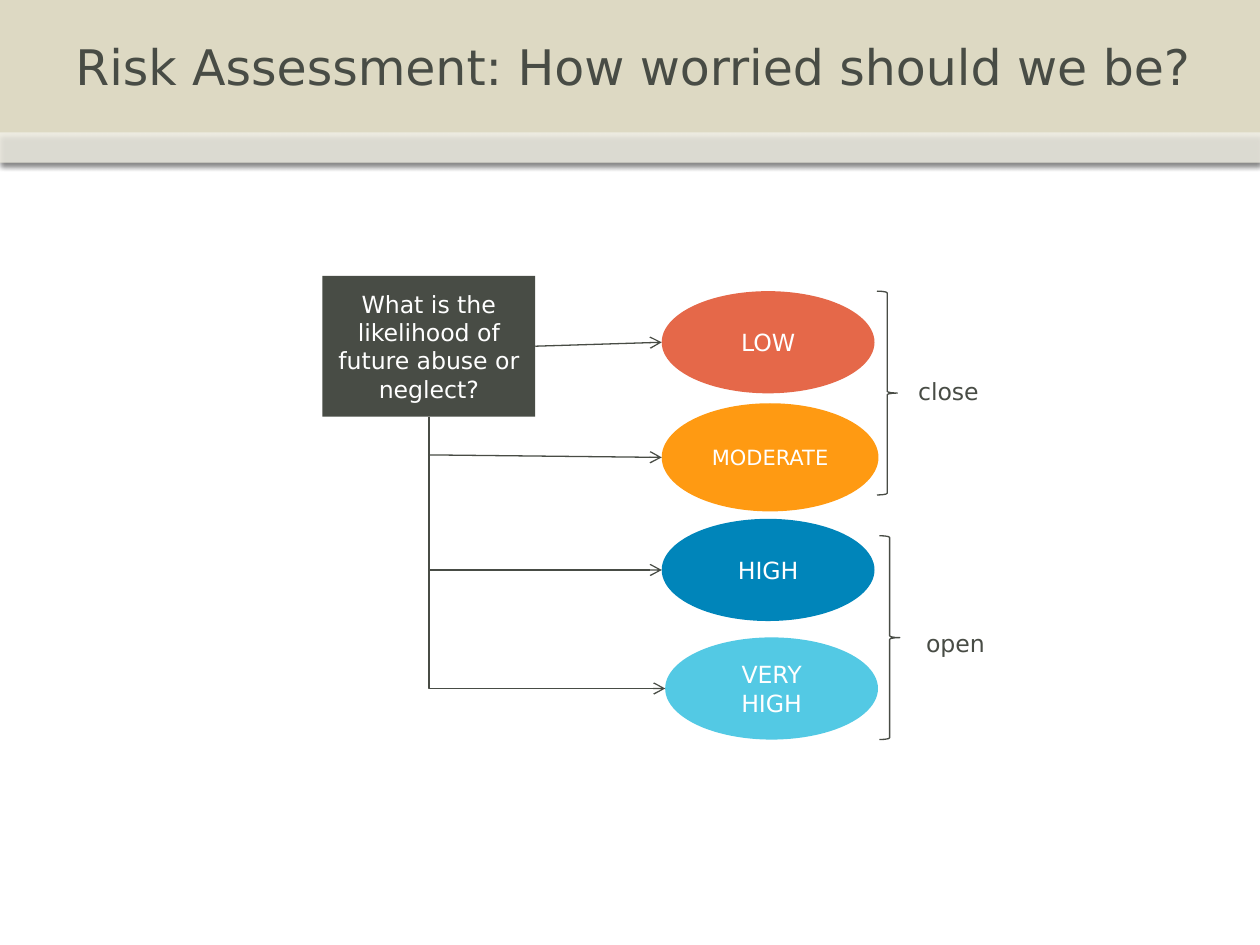
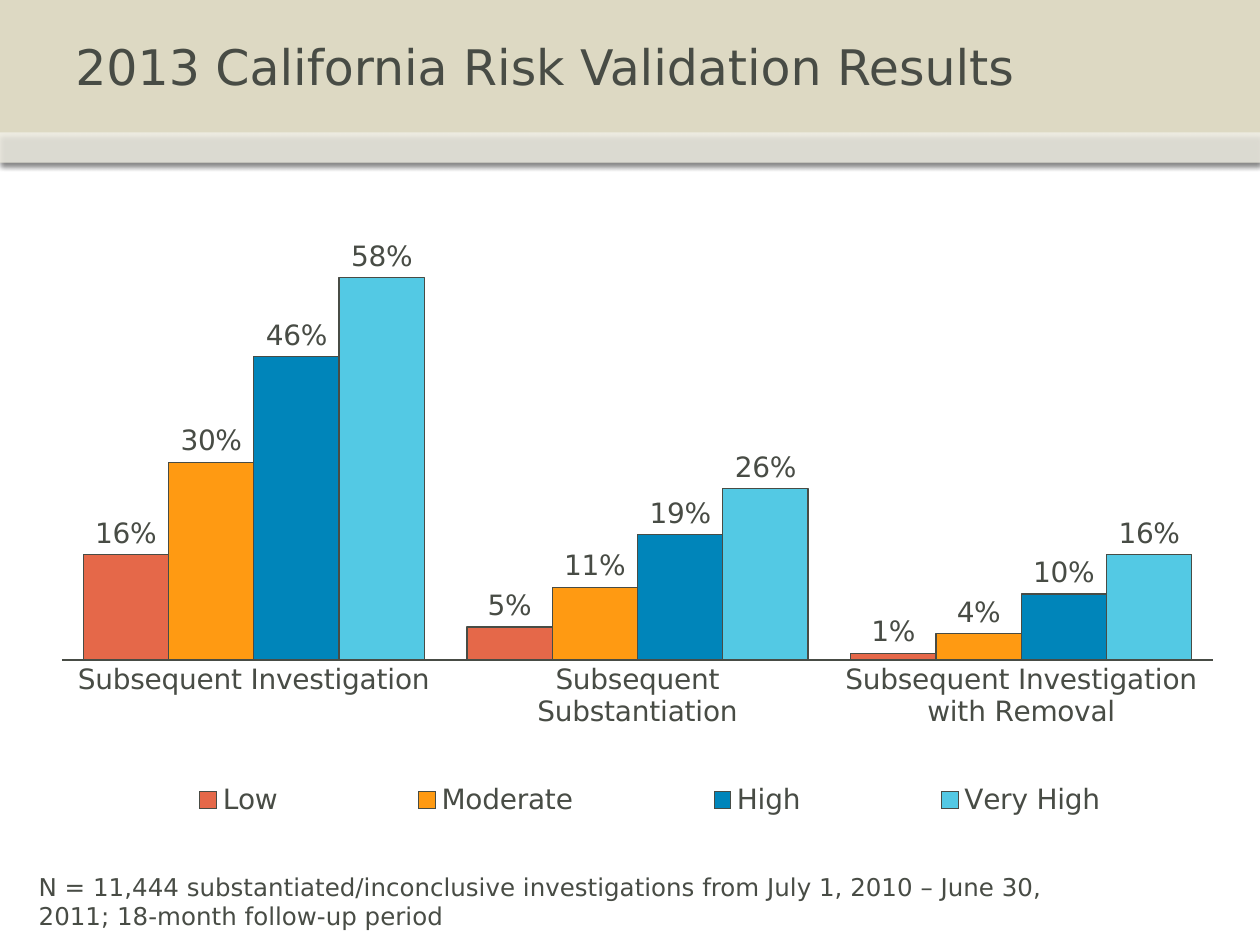
from dataclasses import dataclass

from lxml.etree import SubElement
from pptx import Presentation
from pptx.chart.data import CategoryChartData
from pptx.dml.color import RGBColor
from pptx.enum.chart import XL_CHART_TYPE, XL_LABEL_POSITION, XL_LEGEND_POSITION, XL_TICK_LABEL_POSITION, XL_TICK_MARK
from pptx.enum.shapes import MSO_CONNECTOR, MSO_SHAPE
from pptx.enum.text import MSO_ANCHOR, PP_ALIGN
from pptx.oxml import parse_xml
from pptx.oxml.ns import nsdecls, qn
from pptx.util import Cm, Pt


@dataclass(frozen=True)
class Theme:
    font: str = "DejaVu Sans"
    ink: str = "484C45"
    white: str = "FFFFFF"
    sand: str = "DDD9C3"
    low: str = "E56849"
    moderate: str = "FF9A12"
    high: str = "0085BA"
    very_high: str = "53C9E4"
    title_size: float = 28
    chart_size: float = 16
    note_size: float = 14
    body_size: float = 13.5
    small_size: float = 12
    line_width: float = 0.75


THEME = Theme()


@dataclass(frozen=True)
class Box:
    """A rectangle in centimetres."""
    left: float
    top: float
    width: float
    height: float

    @property
    def middle(self) -> float:
        return self.top + self.height / 2

    @property
    def center(self) -> float:
        return self.left + self.width / 2

    @property
    def bottom(self) -> float:
        return self.top + self.height

    def lengths(self) -> tuple:
        return Cm(self.left), Cm(self.top), Cm(self.width), Cm(self.height)


@dataclass(frozen=True)
class RiskLevel:
    name: str
    color: str
    box: Box
    rates: tuple
    label_size: float = THEME.body_size


@dataclass(frozen=True)
class Decision:
    name: str
    brace: Box
    label: Box


QUESTION_BOX = Box(6.5, 5.56, 4.29, 2.84)
RISK_LEVELS = (
    RiskLevel("Low", THEME.low, Box(13.34, 5.87, 4.29, 2.06), (0.16, 0.05, 0.01)),
    RiskLevel("Moderate", THEME.moderate, Box(13.34, 8.13, 4.37, 2.18), (0.3, 0.11, 0.04), THEME.small_size),
    RiskLevel("High", THEME.high, Box(13.34, 10.46, 4.29, 2.06), (0.46, 0.19, 0.1)),
    RiskLevel("Very High", THEME.very_high, Box(13.41, 12.85, 4.29, 2.06), (0.58, 0.26, 0.16)),
)
DECISIONS = (
    Decision("close", Box(17.68, 5.87, 0.41, 4.11), Box(18.26, 7.47, 1.9, 0.84)),
    Decision("open", Box(17.73, 10.8, 0.41, 4.11), Box(18.42, 12.55, 1.75, 0.84)),
)
OUTCOMES = (
    "Subsequent Investigation",
    "Subsequent Substantiation",
    "Subsequent Investigation with Removal",
)


def rgb(color: str) -> RGBColor:
    return RGBColor.from_string(color)


def style_font(font, size: float, color: str = THEME.ink) -> None:
    font.name = THEME.font
    font.size = Pt(size)
    font.color.rgb = rgb(color)


def style_line(line) -> None:
    line.color.rgb = rgb(THEME.ink)
    line.width = Pt(THEME.line_width)


def write(shape, text: str, size: float, color: str = THEME.ink,
          align=PP_ALIGN.LEFT, anchor=MSO_ANCHOR.TOP) -> None:
    frame = shape.text_frame
    frame.word_wrap = True
    frame.vertical_anchor = anchor
    paragraph = frame.paragraphs[0]
    paragraph.alignment = align
    run = paragraph.add_run()
    run.text = text
    style_font(run.font, size, color)


def add_text(slide, box: Box, text: str, size: float, anchor=MSO_ANCHOR.TOP) -> None:
    write(slide.shapes.add_textbox(*box.lengths()), text, size, anchor=anchor)


def add_filled(slide, kind, box: Box, color: str):
    shape = slide.shapes.add_shape(kind, *box.lengths())
    shape.shadow.inherit = False
    shape.fill.solid()
    shape.fill.fore_color.rgb = rgb(color)
    shape.line.fill.background()
    return shape


def add_node(slide, kind, box: Box, color: str, text: str, size: float):
    shape = add_filled(slide, kind, box, color)
    write(shape, text, size, THEME.white, PP_ALIGN.CENTER, MSO_ANCHOR.MIDDLE)
    return shape


def add_band(slide, box: Box, color: str, opacity: int = 100) -> None:
    """Draw a full-width header band with a soft shadow below it."""
    properties = add_filled(slide, MSO_SHAPE.RECTANGLE, box, color)._element.spPr
    fill_color = properties.find(qn("a:solidFill")).find(qn("a:srgbClr"))
    SubElement(fill_color, qn("a:alpha"), val=str(opacity * 1000))
    shadow = SubElement(properties.find(qn("a:effectLst")), qn("a:outerShdw"),
                        blurRad=str(Pt(3.1)), dist=str(Pt(1.8)), dir="5400000",
                        algn="t", rotWithShape="0")
    shadow_color = SubElement(shadow, qn("a:srgbClr"), val="000000")
    SubElement(shadow_color, qn("a:alpha"), val="35000")


def add_titled_slide(presentation, title: str):
    slide = presentation.slides.add_slide(presentation.slide_layouts[6])
    add_band(slide, Box(0, 0, 25.4, 3.28), THEME.sand)
    add_band(slide, Box(0, 2.67, 25.4, 0.61), THEME.white, opacity=53)
    add_text(slide, Box(1.27, 0, 23.19, 2.67), title, THEME.title_size, MSO_ANCHOR.MIDDLE)
    return slide


def add_arrow(slide, start: tuple, end: tuple, kind=MSO_CONNECTOR.STRAIGHT):
    connector = slide.shapes.add_connector(kind, *(Cm(value) for value in start + end))
    style_line(connector.line)
    SubElement(connector.line._get_or_add_ln(), qn("a:tailEnd"), type="arrow")
    SubElement(connector._element.spPr, qn("a:effectLst"))
    return connector


def add_down_right_arrow(slide, start: tuple, end: tuple) -> None:
    """Draw one elbow that runs down first and then right."""
    connector = add_arrow(slide, start, end, MSO_CONNECTOR.ELBOW)
    across, down = end[0] - start[0], end[1] - start[1]
    turned = Box((start[0] + end[0] - down) / 2, (start[1] + end[1] - across) / 2, down, across)
    connector.left, connector.top, connector.width, connector.height = turned.lengths()
    properties = connector._element.spPr
    properties.find(qn("a:prstGeom")).set("prst", "bentConnector2")
    transform = properties.find(qn("a:xfrm"))
    transform.set("rot", "16200000")
    transform.set("flipH", "1")


def build_risk_slide(presentation) -> None:
    slide = add_titled_slide(presentation, "Risk Assessment: How worried should we be?")
    question = add_node(slide, MSO_SHAPE.RECTANGLE, QUESTION_BOX, THEME.ink,
                        "What is the likelihood of future abuse or neglect?", THEME.body_size)
    for level in RISK_LEVELS:
        add_node(slide, MSO_SHAPE.OVAL, level.box, level.color, level.name.upper(), level.label_size)

    low, moderate, high, very_high = ((level.box.left, level.box.middle) for level in RISK_LEVELS)
    trunk = QUESTION_BOX.center
    add_down_right_arrow(slide, (trunk, QUESTION_BOX.bottom), very_high)
    add_arrow(slide, (trunk, high[1]), high)
    add_arrow(slide, (trunk, 9.17), moderate)
    low_arrow = add_arrow(slide, (QUESTION_BOX.left + QUESTION_BOX.width, QUESTION_BOX.middle), low)
    low_arrow.begin_connect(question, 3)

    for decision in DECISIONS:
        brace = slide.shapes.add_shape(MSO_SHAPE.RIGHT_BRACE, *decision.brace.lengths())
        brace.shadow.inherit = False
        brace.fill.background()
        style_line(brace.line)
        add_text(slide, decision.label, decision.name, THEME.body_size)


def manual_layout(left: float, top: float, width: float, height: float, inner: bool = False):
    """Make a chart layout from fractions of the chart area."""
    target = '<c:layoutTarget val="inner"/>' if inner else ""
    return parse_xml(
        f'<c:layout {nsdecls("c")}><c:manualLayout>{target}'
        '<c:xMode val="edge"/><c:yMode val="edge"/>'
        f'<c:x val="{left}"/><c:y val="{top}"/><c:w val="{width}"/><c:h val="{height}"/>'
        '</c:manualLayout></c:layout>')


def remove_layout(element) -> None:
    for layout in element.findall(qn("c:layout")):
        element.remove(layout)


def style_axes(chart) -> None:
    category_axis = chart.category_axis
    category_axis.major_tick_mark = XL_TICK_MARK.NONE
    category_axis.tick_label_position = XL_TICK_LABEL_POSITION.NEXT_TO_AXIS
    style_font(category_axis.tick_labels.font, THEME.chart_size)
    style_line(category_axis.format.line)
    value_axis = chart.value_axis
    value_axis.minimum_scale, value_axis.maximum_scale = 0, 0.7
    value_axis.has_major_gridlines = False
    value_axis.tick_labels.number_format = "0.0%"
    value_axis.tick_labels.number_format_is_linked = False
    value_axis.visible = False


def style_series(series, color: str) -> None:
    series.format.fill.solid()
    series.format.fill.fore_color.rgb = rgb(color)
    style_line(series.format.line)
    labels = series.data_labels
    labels.show_value = True
    labels.number_format = "0%"
    labels.number_format_is_linked = False
    labels.position = XL_LABEL_POSITION.OUTSIDE_END
    style_font(labels.font, THEME.chart_size)


def style_legend(chart) -> None:
    chart.has_legend = True
    legend = chart.legend
    legend.position = XL_LEGEND_POSITION.BOTTOM
    legend.include_in_layout = False
    style_font(legend.font, THEME.chart_size)
    remove_layout(legend._element)
    legend._element.find(qn("c:legendPos")).addnext(manual_layout(0.02, 0.88, 0.98, 0.1))


def build_results_slide(presentation) -> None:
    slide = add_titled_slide(presentation, "2013 California Risk Validation Results")
    data = CategoryChartData(number_format="0%")
    data.categories = OUTCOMES
    for level in RISK_LEVELS:
        data.add_series(level.name, level.rates)
    chart_box = Box(0.89, 3.63, 23.95, 13.44)
    chart = slide.shapes.add_chart(XL_CHART_TYPE.COLUMN_CLUSTERED, *chart_box.lengths(), data).chart
    chart.has_title = False
    style_font(chart.font, 10)
    plot = chart.plots[0]
    plot.gap_width = 50
    plot.vary_by_categories = False
    for series, level in zip(plot.series, RISK_LEVELS):
        style_series(series, level.color)
    style_axes(chart)
    style_legend(chart)
    plot_area = chart._chartSpace.chart.plotArea
    remove_layout(plot_area)
    plot_area.insert(0, manual_layout(0.015, 0.028, 0.969, 0.692, inner=True))

    add_text(slide, Box(0.53, 17.45, 20.9, 1.45),
             "N = 11,444 substantiated/inconclusive investigations from July 1, 2010 – June 30, 2011; "
             "18-month follow-up period", THEME.note_size)


def main() -> None:
    presentation = Presentation()
    presentation.slide_width, presentation.slide_height = Cm(25.4), Cm(19.05)
    build_risk_slide(presentation)
    build_results_slide(presentation)
    presentation.save("out.pptx")


if __name__ == "__main__":
    main()
